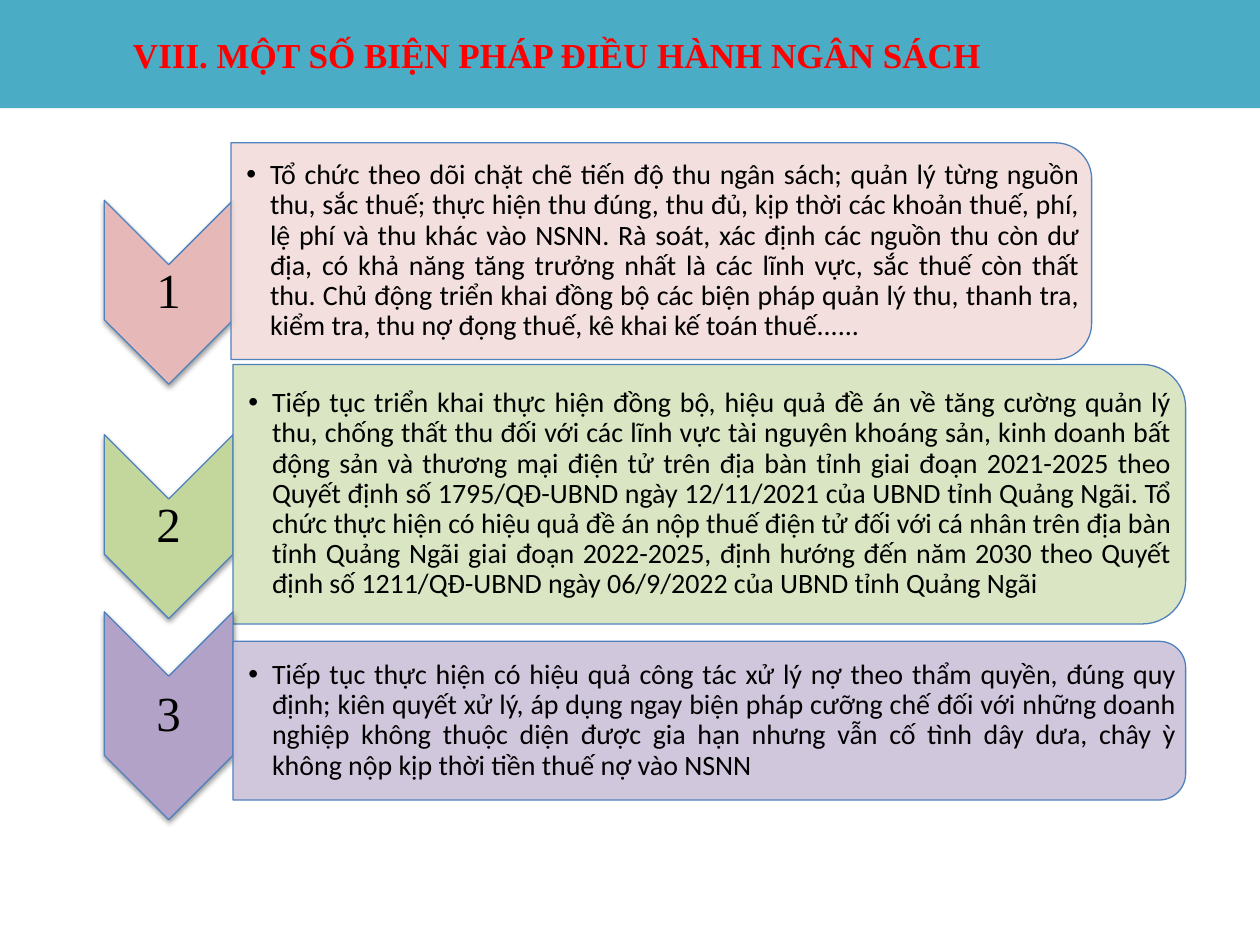
import pptx
import pptx.util
import pptx.dml.color
import pptx.enum.shapes
import pptx.enum.text
import pptx.oxml
import pptx.oxml.ns
from lxml import etree

Pt = pptx.util.Pt
MSO = pptx.enum.shapes.MSO_SHAPE
ALIGN = pptx.enum.text.PP_ALIGN
ANCHOR = pptx.enum.text.MSO_ANCHOR
qn = pptx.oxml.ns.qn


class Theme:
    band, title, text, line = "4AACC5", "FF0000", "000000", "4F81BD"
    serif, sans = "Times New Roman", "Calibri"
    title_size, number_size, body_size = 20, 28, 16
    line_width = 0.75


def rgb(value):
    return pptx.dml.color.RGBColor.from_string(value)


def set_values(obj, values):
    for name, value in values.items():
        setattr(obj, name, value)


class Deck:
    def __init__(self, theme):
        self.t = theme
        self.prs = pptx.Presentation()
        self.prs.slide_width, self.prs.slide_height = Pt(720), Pt(540)
        # The comparison layout offers a title and four bodies
        self.s = self.prs.slides.add_slide(self.prs.slide_layouts[4])
        self.bodies = [sp for sp in self.s.placeholders
                       if sp.placeholder_format.idx > 0]

    def place(self, sp, x, y, w, h):
        set_values(sp, dict(left=Pt(x), top=Pt(y), width=Pt(w), height=Pt(h)))

    def to_front(self, sp):
        sp._element.getparent().append(sp._element)

    def add_text(self, sp, text, font, frame, para):
        tf = sp.text_frame
        set_values(tf, dict(word_wrap=True,
                            auto_size=pptx.enum.text.MSO_AUTO_SIZE.NONE,
                            **frame))
        p = tf.paragraphs[0]
        set_values(p, dict(space_before=Pt(0), **para))
        r = p.add_run()
        r.text = text
        name, size, color, bold = font
        set_values(r.font, dict(name=name, size=Pt(size), bold=bold))
        r.font.color.rgb = rgb(color)
        return p

    def shape(self, kind, x, y, w, h, fill, line=None):
        sp = self.s.shapes.add_shape(kind, Pt(x), Pt(y), Pt(w), Pt(h))
        sp.shadow.inherit = False
        sp.fill.solid()
        sp.fill.fore_color.rgb = rgb(fill)
        if line:
            sp.line.color.rgb = rgb(line)
            sp.line.width = Pt(self.t.line_width)
        else:
            sp.line.fill.background()
        return sp

    def turned(self, kind, x, y, w, h, fill):
        """Add a shape turned by 90 degrees that fills the frame x, y, w, h."""
        sp = self.shape(kind, x + (w - h) / 2, y + (h - w) / 2, h, w,
                        fill, self.t.line)
        sp.rotation = 90
        return sp

    def title(self, text, height):
        self.shape(MSO.RECTANGLE, 0, 0, 720, height, self.t.band)
        sp = self.s.shapes.title
        self.place(sp, 36, 19.4, 648, height - 19.4)
        self.add_text(sp, text,
                      (self.t.serif, self.t.title_size, self.t.title, True),
                      dict(margin_left=Pt(40), margin_right=0, margin_top=0,
                           margin_bottom=0, vertical_anchor=ANCHOR.TOP),
                      dict(alignment=ALIGN.LEFT))
        self.to_front(sp)

    def chevron(self, number, x, y, w, h, fill):
        sp = self.turned(MSO.CHEVRON, x, y, w, h, fill)
        effects = sp._element.spPr.find(qn("a:effectLst"))
        shadow = etree.SubElement(
            effects, qn("a:outerShdw"), blurRad=str(Pt(3.1)),
            dist=str(Pt(1.6)), dir="5400000", rotWithShape="0")
        color = etree.SubElement(shadow, qn("a:srgbClr"), val="000000")
        etree.SubElement(color, qn("a:alpha"), val="38000")
        # The number sits between the notch and the point, each w / 2 deep
        box = self.s.shapes.add_textbox(Pt(x), Pt(y + w / 2), Pt(w), Pt(h - w))
        inset = Pt(1.4)
        self.add_text(box, number,
                      (self.t.serif, self.t.number_size, self.t.text, False),
                      dict(margin_left=inset, margin_right=inset,
                           margin_top=inset, margin_bottom=inset,
                           vertical_anchor=ANCHOR.MIDDLE),
                      dict(alignment=ALIGN.CENTER, line_spacing=0.9))

    def panel(self, text, x, y, w, h, fill):
        sp = self.turned(MSO.ROUND_2_SAME_RECTANGLE, x, y, w, h, fill)
        color = sp._element.spPr.find(qn("a:solidFill"))[0]
        etree.SubElement(color, qn("a:alpha"), val="90000")
        # The list keeps clear of the rounded corners
        gap = h / 6 * 0.29
        body = self.bodies.pop(0)
        self.place(body, x, y + gap, w - gap, h - 2 * gap)
        p = self.add_text(body, text,
                          (self.t.sans, self.t.body_size, self.t.text, False),
                          dict(margin_left=Pt(8.8), margin_right=Pt(0.8),
                               margin_top=Pt(0.8), margin_bottom=Pt(0.8),
                               vertical_anchor=ANCHOR.MIDDLE),
                          dict(alignment=ALIGN.JUSTIFY, line_spacing=0.9))
        pPr = p._p.get_or_add_pPr()
        pPr.set("marL", str(Pt(13.5)))
        pPr.set("indent", str(-Pt(13.5)))
        etree.SubElement(pPr, qn("a:buFont"), typeface="Arial")
        etree.SubElement(pPr, qn("a:buChar"), char="•")
        self.to_front(body)

    def save(self):
        for sp in self.bodies:
            sp._element.getparent().remove(sp._element)
        self.prs.save("out.pptx")


# Each measure: chevron (top, height, fill), panel (x, y, w, h, fill), text
MEASURES = [
    ((114.5, 105.1, "E6B9B8"), (132, 81.6, 491.8, 123.8, "F2DCDB"),
     "Tổ chức theo dõi chặt chẽ tiến độ thu ngân sách; quản lý từng nguồn "
     "thu, sắc thuế; thực hiện thu đúng, thu đủ, kịp thời các khoản thuế, "
     "phí, lệ phí và thu khác vào NSNN. Rà soát, xác định các nguồn thu còn "
     "dư địa, có khả năng tăng trưởng nhất là các lĩnh vực, sắc thuế còn "
     "thất thu. Chủ động triển khai đồng bộ các biện pháp quản lý thu, thanh "
     "tra, kiểm tra, thu nợ đọng thuế, kê khai kế toán thuế......"),
    ((248.4, 105.1, "C3D69B"), (133.2, 208.3, 544.3, 148.3, "D7E4BD"),
     "Tiếp tục triển khai thực hiện đồng bộ, hiệu quả đề án về tăng cường "
     "quản lý thu, chống thất thu đối với các lĩnh vực tài nguyên khoáng "
     "sản, kinh doanh bất động sản và thương mại điện tử trên địa bàn tỉnh "
     "giai đoạn 2021-2025 theo Quyết định số 1795/QĐ-UBND ngày 12/11/2021 "
     "của UBND tỉnh Quảng Ngãi. Tổ chức thực hiện có hiệu quả đề án nộp thuế "
     "điện tử đối với cá nhân trên địa bàn tỉnh Quảng Ngãi giai đoạn "
     "2022-2025, định hướng đến năm 2030 theo Quyết định số 1211/QĐ-UBND "
     "ngày 06/9/2022 của UBND tỉnh Quảng Ngãi"),
    ((349.6, 118.8, "B3A2C7"), (133.2, 366.5, 544.3, 90.7, "CCC1DA"),
     "Tiếp tục thực hiện có hiệu quả công tác xử lý nợ theo thẩm quyền, đúng "
     "quy định; kiên quyết xử lý, áp dụng ngay biện pháp cưỡng chế đối với "
     "những doanh nghiệp không thuộc diện được gia hạn nhưng vẫn cố tình dây "
     "dưa, chây ỳ không nộp kịp thời tiền thuế nợ vào NSNN"),
]


def main():
    deck = Deck(Theme())
    for i, ((top, height, fill), panel, text) in enumerate(MEASURES, 1):
        deck.chevron(str(i), 59.6, top, 73.6, height, fill)
        deck.panel(text, *panel)
    deck.title("VIII. MỘT SỐ BIỆN PHÁP ĐIỀU HÀNH NGÂN SÁCH", 61.8)
    deck.save()


if __name__ == "__main__":
    main()
